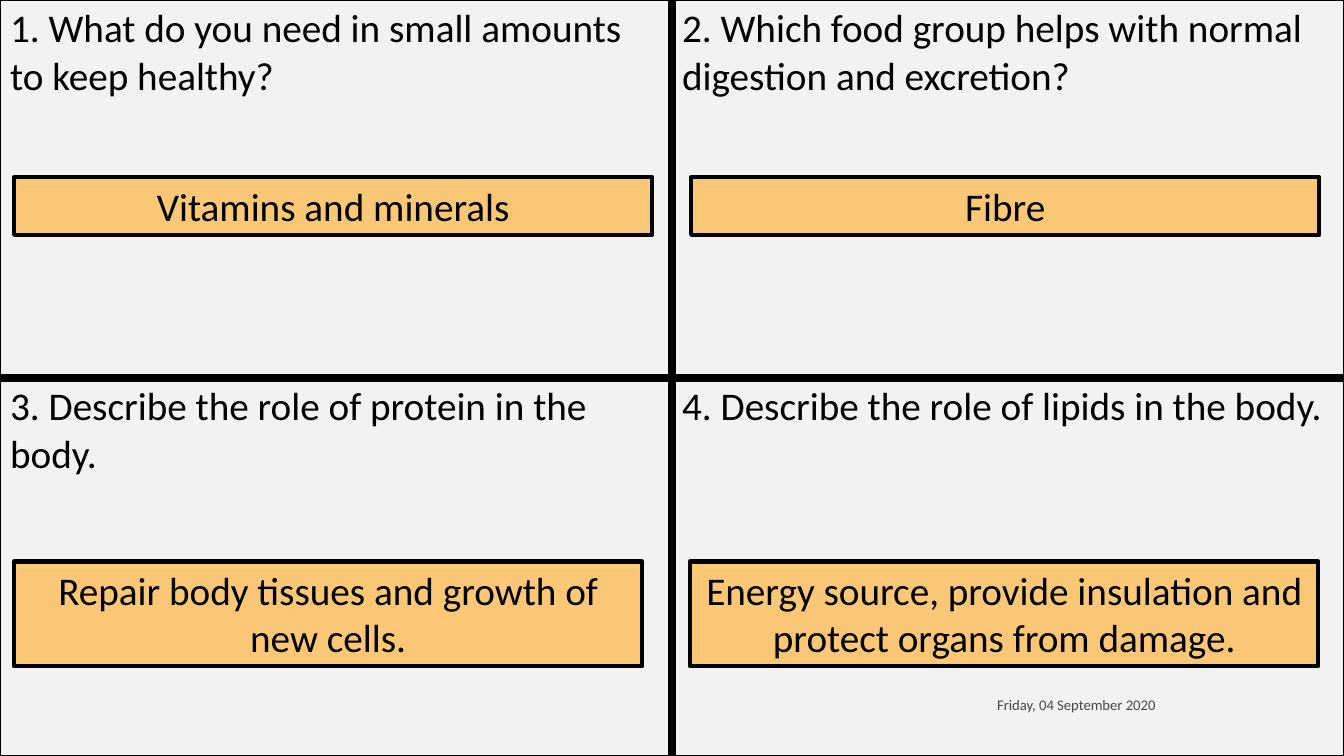
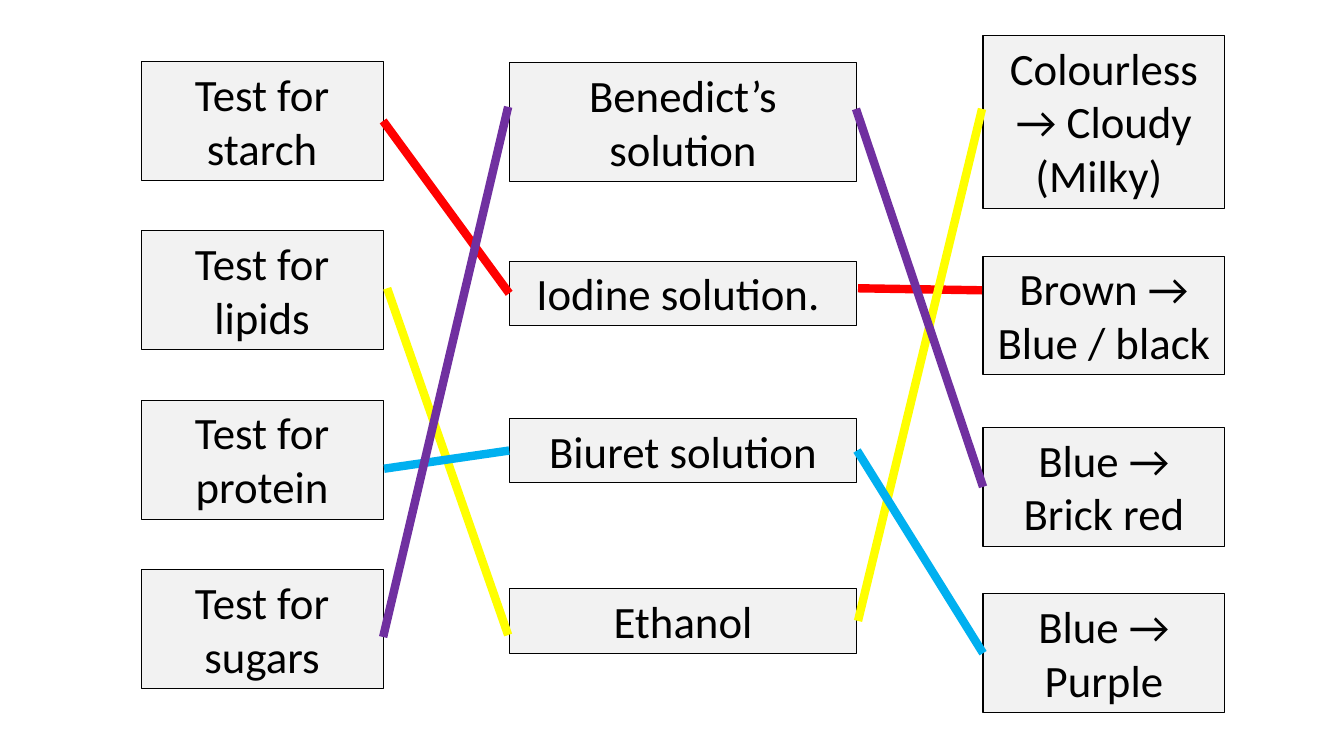
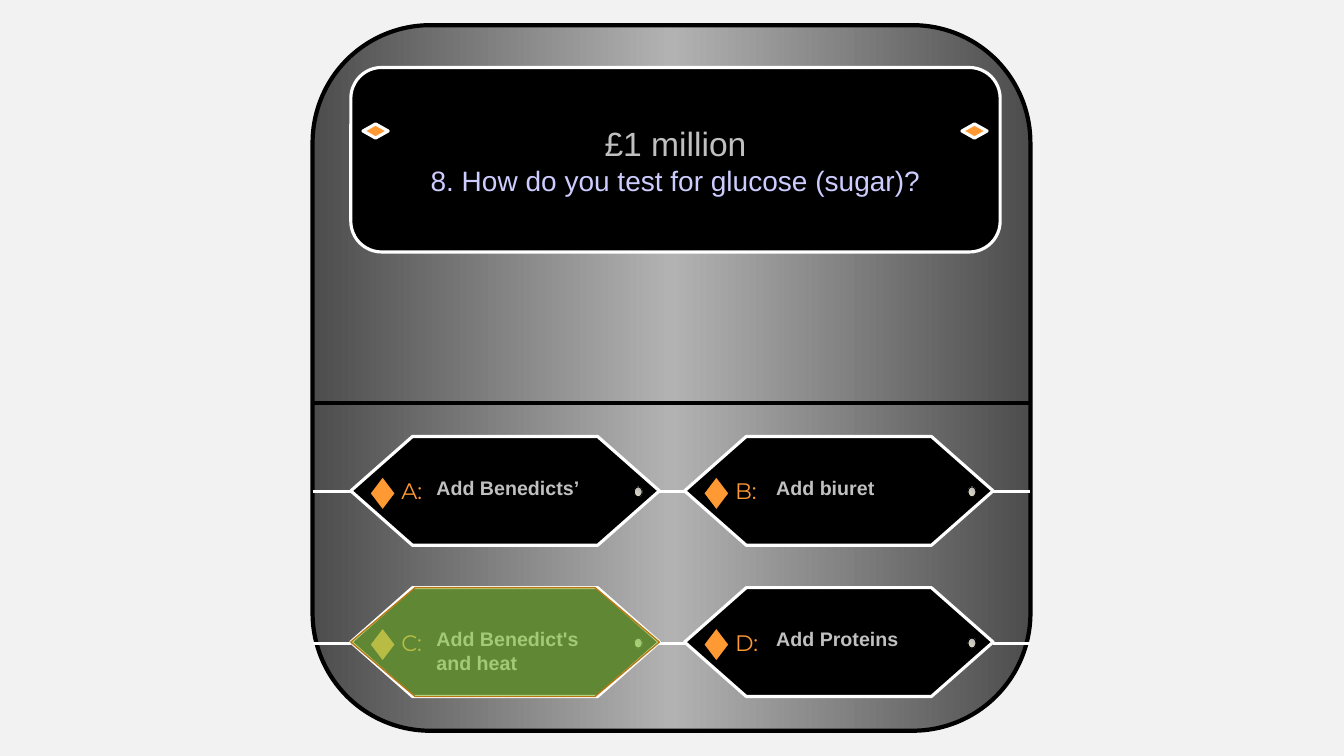
import pptx
import pptx.util
import pptx.dml.color
import pptx.enum.shapes
import pptx.enum.text
import pptx.oxml
import pptx.oxml.ns
import copy
import lxml.etree

Inches = pptx.util.Inches
Pt = pptx.util.Pt
SHAPE = pptx.enum.shapes.MSO_SHAPE
ALIGN = pptx.enum.text.PP_ALIGN
ANCHOR = pptx.enum.text.MSO_ANCHOR
qn = pptx.oxml.ns.qn

# Shared look
WIDTH, HEIGHT = 13.33, 7.5
BLACK, WHITE, PALE = "000000", "FFFFFF", "F2F2F2"
ANSWER_FILL, ORANGE, SILVER = "FAC777", "FF9933", "C0C0C0"
PANEL_GRADIENT = [(0, "4D4D4D"), (0.5, "B2B2B2"), (1, "4D4D4D")]
DOT_GRADIENT = [(0, "E8E3CE"), (1, "B2B2B2")]
CARD_FONT = {"name": "Calibri", "size": Pt(28)}
MATCH_FONT = {"name": "Calibri", "size": Pt(32)}
DATE_FONT = {"name": "Calibri", "size": Pt(10.5)}
LETTER_FONT = {"name": "Montserrat", "size": Pt(16)}
OPTION_FONT = {"name": "Arial", "size": Pt(14), "bold": True}


def rgb(value):
    return pptx.dml.color.RGBColor.from_string(value)


def set_opacity(parent, percent):
    for color in parent.iter(qn("a:srgbClr")):
        alpha = lxml.etree.SubElement(color, qn("a:alpha"))
        alpha.set("val", str(percent * 1000))


def add_slide(prs, background):
    s = prs.slides.add_slide(prs.slide_layouts[6])
    s.background.fill.solid()
    s.background.fill.fore_color.rgb = rgb(background)
    return s


def write(p, text, font, color=BLACK, align=ALIGN.LEFT):
    p.alignment = align
    r = p.add_run()
    r.text = text
    for key, value in font.items():
        setattr(r.font, key, value)
    r.font.color.rgb = rgb(color)
    return r


def set_gradient(sp, stops, angle):
    sp.fill.gradient()
    sp.fill.gradient_angle = angle
    stop_list = sp._element.spPr.find(".//" + qn("a:gsLst"))
    while len(stop_list) < len(stops):
        stop_list.append(copy.deepcopy(stop_list[0]))
    for stop, (position, color) in zip(sp.fill.gradient_stops, stops):
        stop.position = position
        stop.color.rgb = rgb(color)


def add_box(s, kind, at, fill=None, line=BLACK, weight=0.75):
    sp = s.shapes.add_shape(kind, *map(Inches, at))
    sp.shadow.inherit = False
    if fill:
        sp.fill.solid()
        sp.fill.fore_color.rgb = rgb(fill)
    else:
        sp.fill.background()
    sp.line.color.rgb = rgb(line)
    sp.line.width = Pt(weight)
    sp.text_frame.word_wrap = True
    sp.text_frame.vertical_anchor = ANCHOR.TOP
    return sp


def add_line(s, start, end, color, weight):
    """Each end is a point (x, y) or a joint (shape, site)."""
    points = [(0, 0) if hasattr(e[0], "shape_id") else e for e in (start, end)]
    c = s.shapes.add_connector(pptx.enum.shapes.MSO_CONNECTOR.STRAIGHT,
                               *[Inches(v) for point in points for v in point])
    for e, connect in ((start, c.begin_connect), (end, c.end_connect)):
        if hasattr(e[0], "shape_id"):
            connect(*e)
    c.line.color.rgb = rgb(color)
    c.line.width = Pt(weight)
    lxml.etree.SubElement(c._element.spPr, qn("a:effectLst"))


# Slide 1: four question cards
def set_borders(cell, weights):
    tcPr = cell._tc.get_or_add_tcPr()
    for side in "LRTB":
        ln = lxml.etree.SubElement(tcPr, qn("a:ln" + side), w=str(Pt(weights[side])))
        fill = lxml.etree.SubElement(ln, qn("a:solidFill"))
        lxml.etree.SubElement(fill, qn("a:srgbClr"), val=BLACK)


def question_grid(s, questions, box):
    table = s.shapes.add_table(2, 2, *map(Inches, box)).table
    table.first_row = table.horz_banding = False
    for i, question in enumerate(questions):
        row, col = divmod(i, 2)
        table.rows[row].height = Inches(box[3] / 2)
        cell = table.cell(row, col)
        set_borders(cell, {"L": 6 if col else 1, "R": 1 if col else 6,
                           "T": 6 if row else 1, "B": 1 if row else 6})
        cell.fill.background()
        write(cell.text_frame.paragraphs[0], question, CARD_FONT)


def build_questions(prs):
    s = add_slide(prs, PALE)
    # Date
    date = s.shapes.add_textbox(*map(Inches, (8.55, 6.82, 3.01, 0.35)))
    date.text_frame.word_wrap = True
    date.text_frame.vertical_anchor = ANCHOR.MIDDLE
    r = write(date.text_frame.paragraphs[0], "Friday, 04 September 2020",
              DATE_FONT, align=ALIGN.RIGHT)
    set_opacity(r._r, 70)
    # Questions, then the answer laid on each card
    cards = [
        ("1. What do you need in small amounts to keep healthy?",
         "Vitamins and minerals", (0.14, 1.76, 6.33, 0.57)),
        ("2. Which food group helps with normal digestion and excretion?",
         "Fibre", (0.19, 1.76, 6.23, 0.57)),
        ("3. Describe the role of protein in the body.",
         "Repair body tissues and growth of new cells.", (0.14, 1.82, 6.23, 1.04)),
        ("4. Describe the role of lipids in the body.",
         "Energy source, provide insulation and protect organs from damage.",
         (0.18, 1.82, 6.23, 1.04)),
    ]
    question_grid(s, [card[0] for card in cards], (0, 0, WIDTH, HEIGHT))
    for i, (_, answer, (dx, dy, w, h)) in enumerate(cards):
        row, col = divmod(i, 2)
        at = (col * WIDTH / 2 + dx, row * HEIGHT / 2 + dy, w, h)
        sp = add_box(s, SHAPE.RECTANGLE, at, ANSWER_FILL, weight=3)
        write(sp.text_frame.paragraphs[0], answer, CARD_FONT, align=ALIGN.CENTER)


# Slide 2: match test, reagent and colour change
def match_column(s, left, width, items):
    boxes = []
    for text, top, height in items:
        sp = add_box(s, SHAPE.RECTANGLE, (left, top, width, height), PALE)
        write(sp.text_frame.paragraphs[0], text, MATCH_FONT, align=ALIGN.CENTER)
        boxes.append(sp)
    return boxes


def build_matching(prs):
    s = add_slide(prs, WHITE)
    nutrients = ["starch", "lipids", "protein", "sugars"]
    starch = match_column(s, 1.4, 2.4, [
        (f"Test for {name}", 0.61 + 1.68 * i, 1.18)
        for i, name in enumerate(nutrients)])[0]
    _, iodine, biuret, _ = match_column(s, 5.05, 3.45, [
        ("Benedict’s solution", 0.62, 1.18), ("Iodine solution. ", 2.59, 0.64),
        ("Biuret solution", 4.15, 0.64), ("Ethanol", 5.84, 0.64)])
    _, _, brick_red, purple = match_column(s, 9.75, 2.4, [
        ("Colourless → Cloudy (Milky) ", 0.35, 1.72),
        ("Brown → Blue / black", 2.54, 1.18),
        ("Blue → Brick red", 4.24, 1.18), ("Blue → Purple", 5.89, 1.18)])
    # Matching lines, one colour for each test
    for color, start, end in [
        ("FF0000", (starch, 3), (iodine, 1)),
        ("FF0000", (8.51, 2.86), (9.74, 2.88)),
        ("FFFF00", (3.84, 2.86), (5.04, 6.3)),
        ("FFFF00", (8.51, 6.16), (9.74, 1.08)),
        ("00B0F0", (3.81, 4.65), (biuret, 1)),
        ("00B0F0", (biuret, 3), (purple, 1)),
        ("7030A0", (3.8, 6.32), (5.04, 1.06)),
        ("7030A0", (8.49, 1.08), (brick_red, 1)),
    ]:
        add_line(s, start, end, color, 6)


# Slide 3: quiz board
BOARD = (3.1, 0.25, 7.12, 7)
OPTION_W, OPTION_H, OPTION_PITCH = 3.06, 1.08, 3.31


def question_panel(s, x, y, w, h):
    sp = add_box(s, SHAPE.FLOWCHART_ALTERNATE_PROCESS, (x, y, w, h), BLACK, WHITE, 2.25)
    tf = sp.text_frame
    tf.word_wrap = False
    tf.vertical_anchor = ANCHOR.MIDDLE
    write(tf.paragraphs[0], "£1 million", {"name": "Arial", "size": Pt(24)},
          SILVER, ALIGN.CENTER)
    write(tf.add_paragraph(), "8. How do you test for glucose (sugar)?",
          {"name": "Arial", "size": Pt(20)}, "CCCCFF", ALIGN.CENTER)
    for dx in (0.12, w - 0.38):
        add_box(s, SHAPE.DIAMOND, (x + dx, y + 0.56, 0.25, 0.14), ORANGE, WHITE, 2.25)


def option(s, x, y, letter, text, text_dx, lines):
    add_box(s, SHAPE.FLOWCHART_PREPARATION, (x, y, OPTION_W, OPTION_H),
            BLACK, WHITE, 2.25)
    add_box(s, SHAPE.DIAMOND, (x + 0.19, y + 0.4, 0.25, 0.33), ORANGE)
    dot = add_box(s, SHAPE.FLOWCHART_CONNECTOR, (x + 2.81, y + 0.5, 0.08, 0.1))
    set_gradient(dot, DOT_GRADIENT, 45)
    # Letter and answer
    tf = add_box(s, SHAPE.RECTANGLE, (x + 0.5, y + 0.4, 0.25, 0.28)).text_frame
    for side in ("left", "right", "top", "bottom"):
        setattr(tf, "margin_" + side, 0)
    tf.vertical_anchor = ANCHOR.MIDDLE
    write(tf.paragraphs[0], letter + ":", LETTER_FONT, ORANGE)
    label = add_box(s, SHAPE.RECTANGLE,
                    (x + text_dx, y + 0.34, 1.75, 0.11 + 0.23 * lines))
    write(label.text_frame.paragraphs[0], text, OPTION_FONT, SILVER)


def option_row(s, x, y, options):
    middle = y + 0.55
    second = x + OPTION_PITCH
    for start, end in ((BOARD[0], x), (x + OPTION_W, second),
                       (second + OPTION_W, BOARD[0] + BOARD[2])):
        add_line(s, (start, middle), (end, middle), WHITE, 2.25)
    for left, text_dx, (letter, text, lines) in zip((x, second), (0.75, 0.81), options):
        option(s, left, y, letter, text, text_dx, lines)


def build_quiz(prs):
    s = add_slide(prs, PALE)
    # Board
    x, y, w, h = BOARD
    board = add_box(s, SHAPE.FLOWCHART_ALTERNATE_PROCESS, BOARD, weight=3)
    set_gradient(board, PANEL_GRADIENT, 0)
    add_line(s, (x, 4), (x + w, 4), BLACK, 3)
    # Question and options
    left, tops = x + 0.38, (4.33, 5.83)
    question_panel(s, left, 0.67, 6.44, 1.83)
    rows = [[("A", "Add Benedicts’", 1), ("B", "Add biuret", 1)],
            [("C", "Add Benedict's and heat", 2), ("D", "Add Proteins", 1)]]
    for top, options in zip(tops, rows):
        option_row(s, left, top, options)
    # Correct answer highlight
    highlight = add_box(s, SHAPE.HEXAGON, (left, tops[1], OPTION_W, OPTION_H),
                        "92D050", "B67815", 1)
    highlight.adjustments[0] = 0.59
    set_opacity(highlight._element.spPr.find(qn("a:solidFill")), 65)


def main():
    prs = pptx.Presentation()
    prs.slide_width, prs.slide_height = Inches(WIDTH), Inches(HEIGHT)
    build_questions(prs)
    build_matching(prs)
    build_quiz(prs)
    prs.save("out.pptx")


if __name__ == "__main__":
    main()
